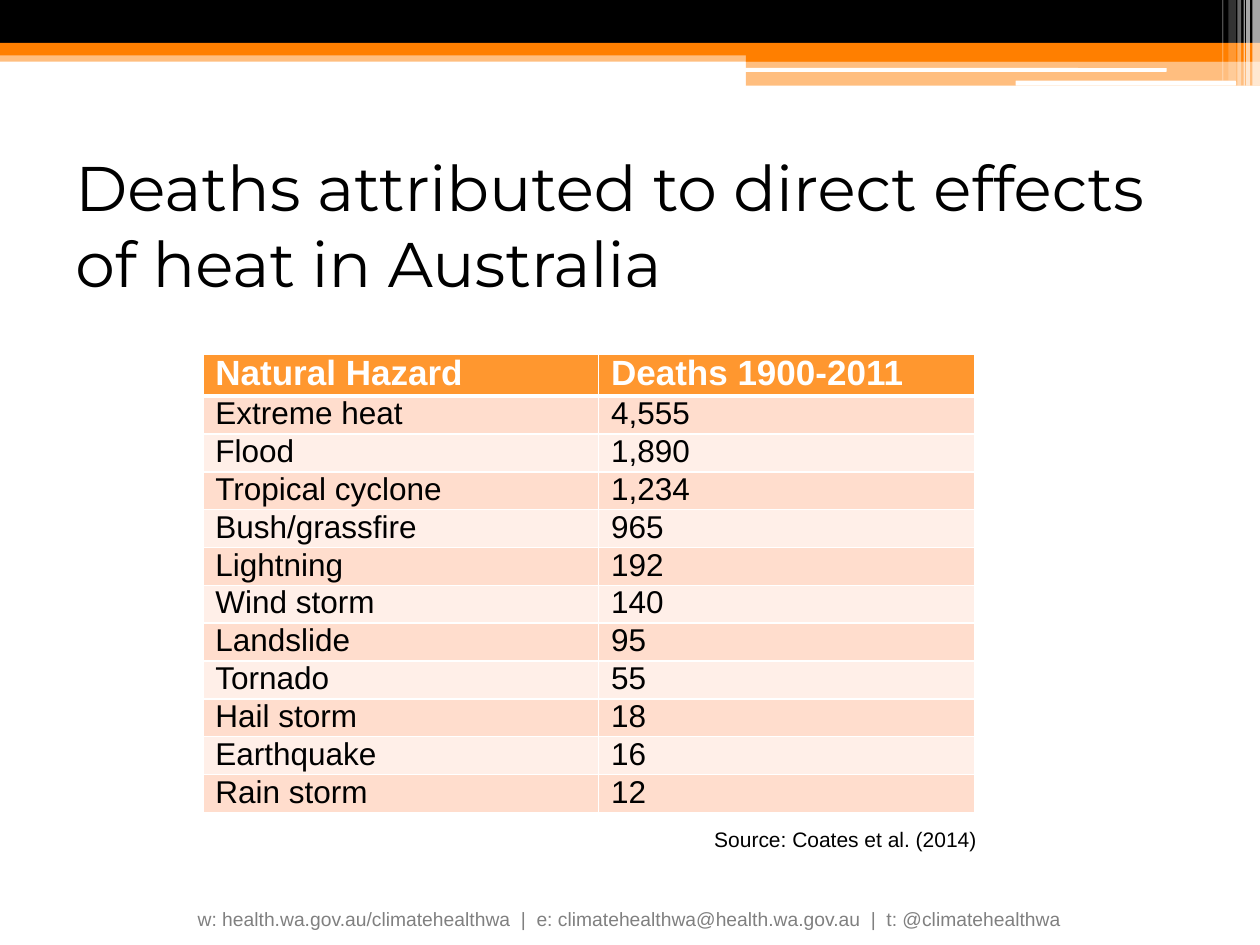
from lxml.etree import SubElement
from pptx import Presentation
from pptx.dml.color import RGBColor
from pptx.enum.shapes import MSO_SHAPE
from pptx.enum.text import MSO_ANCHOR, PP_ALIGN
from pptx.oxml.ns import qn
from pptx.util import Inches, Pt

BLACK = RGBColor(0x00, 0x00, 0x00)
WHITE = RGBColor(0xFF, 0xFF, 0xFF)
ORANGE = RGBColor(0xFF, 0x7F, 0x00)
GREY = RGBColor(0x80, 0x80, 0x80)
HEADER_FILL = RGBColor(0xFF, 0x97, 0x2F)
BAND_FILLS = (RGBColor(0xFF, 0xDD, 0xCD), RGBColor(0xFF, 0xEF, 0xE8))

RECT, ROUNDED = MSO_SHAPE.RECTANGLE, MSO_SHAPE.ROUNDED_RECTANGLE

# Left, top, width, height, fill, opacity in percent, preset
BANNER_BARS = [
    (0, 0.4, 10, 0.09, ORANGE, 50, RECT),
    (0, 0, 10, 0.34, BLACK, 100, RECT),
    (0, 0.34, 10, 0.1, ORANGE, 100, RECT),
    (5.92, 0.39, 4.08, 0.1, ORANGE, 100, RECT),
    (5.92, 0.48, 4.08, 0.2, ORANGE, 50, RECT),
    (5.91, 0.54, 3.35, 0.03, WHITE, 100, ROUNDED),
    (8.06, 0.64, 1.75, 0.04, WHITE, 100, ROUNDED),
]
# Left, width, height, opacity in percent
BANNER_STRIPES = [
    (9.94, 0.06, 0.68, 65),
    (9.89, 0.03, 0.68, 65),
    (9.87, 0.01, 0.68, 60),
    (9.82, 0.03, 0.68, 40),
    (9.75, 0.06, 0.64, 20),
    (9.7, 0.01, 0.64, 30),
]

HAZARD_ROWS = [
    ("Natural Hazard", "Deaths 1900-2011"),
    ("Extreme heat", "4,555"),
    ("Flood", "1,890"),
    ("Tropical cyclone", "1,234"),
    ("Bush/grassfire", "965"),
    ("Lightning", "192"),
    ("Wind storm", "140"),
    ("Landslide", "95"),
    ("Tornado", "55"),
    ("Hail storm", "18"),
    ("Earthquake", "16"),
    ("Rain storm", "12"),
]


def set_attributes(target, values):
    for name, value in values.items():
        setattr(target, name, value)


def format_font(font, size, color, name="Arial", bold=False):
    set_attributes(font, {"size": Pt(size), "name": name, "bold": bold})
    font.color.rgb = color


def add_bar(slide, left, top, width, height, color, opacity, preset):
    shape = slide.shapes.add_shape(
        preset, Inches(left), Inches(top), Inches(width), Inches(height))
    shape.shadow.inherit = False
    shape.line.fill.background()
    shape.fill.solid()
    shape.fill.fore_color.rgb = color
    if opacity < 100:
        color_element = shape.fill._xPr.find(f".//{qn('a:srgbClr')}")
        SubElement(color_element, qn("a:alpha"), val=str(opacity * 1000))


def add_banner(slide, left, top):
    for x, y, width, height, color, opacity, preset in BANNER_BARS:
        add_bar(slide, left + x, top + y, width, height, color, opacity, preset)
    # Translucent stripes at the right edge
    for x, width, height, opacity in BANNER_STRIPES:
        add_bar(slide, left + x, top, width, height, WHITE, opacity, RECT)


def add_text(slide, box, text, font_values, frame_values=None, align=PP_ALIGN.LEFT):
    frame = slide.shapes.add_textbox(*map(Inches, box)).text_frame
    set_attributes(frame, {"word_wrap": True, **(frame_values or {})})
    paragraph = frame.paragraphs[0]
    paragraph.alignment = align
    run = paragraph.add_run()
    run.text = text
    format_font(run.font, **font_values)


def set_borders(cell, widths):
    properties = cell._tc.get_or_add_tcPr()
    for position, (side, width) in enumerate(widths.items()):
        line = properties.makeelement(qn(f"a:{side}"), {"w": str(Pt(width))})
        fill = SubElement(line, qn("a:solidFill"))
        SubElement(fill, qn("a:srgbClr"), val=str(WHITE))
        properties.insert(position, line)


def fill_cell(cell, text, row_index):
    header = row_index == 0
    set_attributes(cell, {
        "text": text,
        "margin_left": Inches(0.1), "margin_right": Inches(0.1),
        "margin_top": 0, "margin_bottom": 0,
    })
    cell.fill.solid()
    cell.fill.fore_color.rgb = HEADER_FILL if header else BAND_FILLS[(row_index - 1) % 2]
    paragraph = cell.text_frame.paragraphs[0]
    set_attributes(paragraph, {"space_before": Pt(3), "space_after": Pt(3)})
    format_font(paragraph.runs[0].font, size=20 if header else 18,
                color=WHITE if header else BLACK, bold=header)
    set_borders(cell, {"lnL": 1, "lnR": 1,
                       "lnT": 3 if row_index == 1 else 1,
                       "lnB": 3 if header else 1})


def add_hazard_table(slide, left, top, column_widths, row_height):
    table = slide.shapes.add_table(
        len(HAZARD_ROWS), len(column_widths), Inches(left), Inches(top),
        Inches(sum(column_widths)), Inches(row_height * len(HAZARD_ROWS))).table
    for column, width in zip(table.columns, column_widths):
        column.width = Inches(width)
    for row_index, texts in enumerate(HAZARD_ROWS):
        table.rows[row_index].height = Inches(row_height)
        for column_index, text in enumerate(texts):
            fill_cell(table.cell(row_index, column_index), text, row_index)


def main():
    presentation = Presentation()
    set_attributes(presentation, {"slide_width": Inches(10), "slide_height": Inches(7.5)})
    slide = presentation.slides.add_slide(presentation.slide_layouts[6])

    add_banner(slide, 0, 0)
    # Title
    add_text(slide, (0.5, 1.25, 9, 1.17),
             "Deaths attributed to direct effects of heat in Australia",
             {"size": 36, "color": BLACK, "name": "Montserrat"},
             {"vertical_anchor": MSO_ANCHOR.MIDDLE, "margin_bottom": Inches(0.16)})
    add_hazard_table(slide, 1.61, 2.81, (3.14, 2.99), 0.27)
    # Source and contact lines
    add_text(slide, (5.57, 6.51, 2.98, 0.3), "Source: Coates et al. (2014)",
             {"size": 12, "color": BLACK})
    add_text(slide, (0.51, 7.15, 8.98, 0.29),
             "w: health.wa.gov.au/climatehealthwa  |  "
             "e: climatehealthwa@health.wa.gov.au  |  t: @climatehealthwa",
             {"size": 11, "color": GREY}, align=PP_ALIGN.CENTER)

    presentation.save("out.pptx")


if __name__ == "__main__":
    main()
